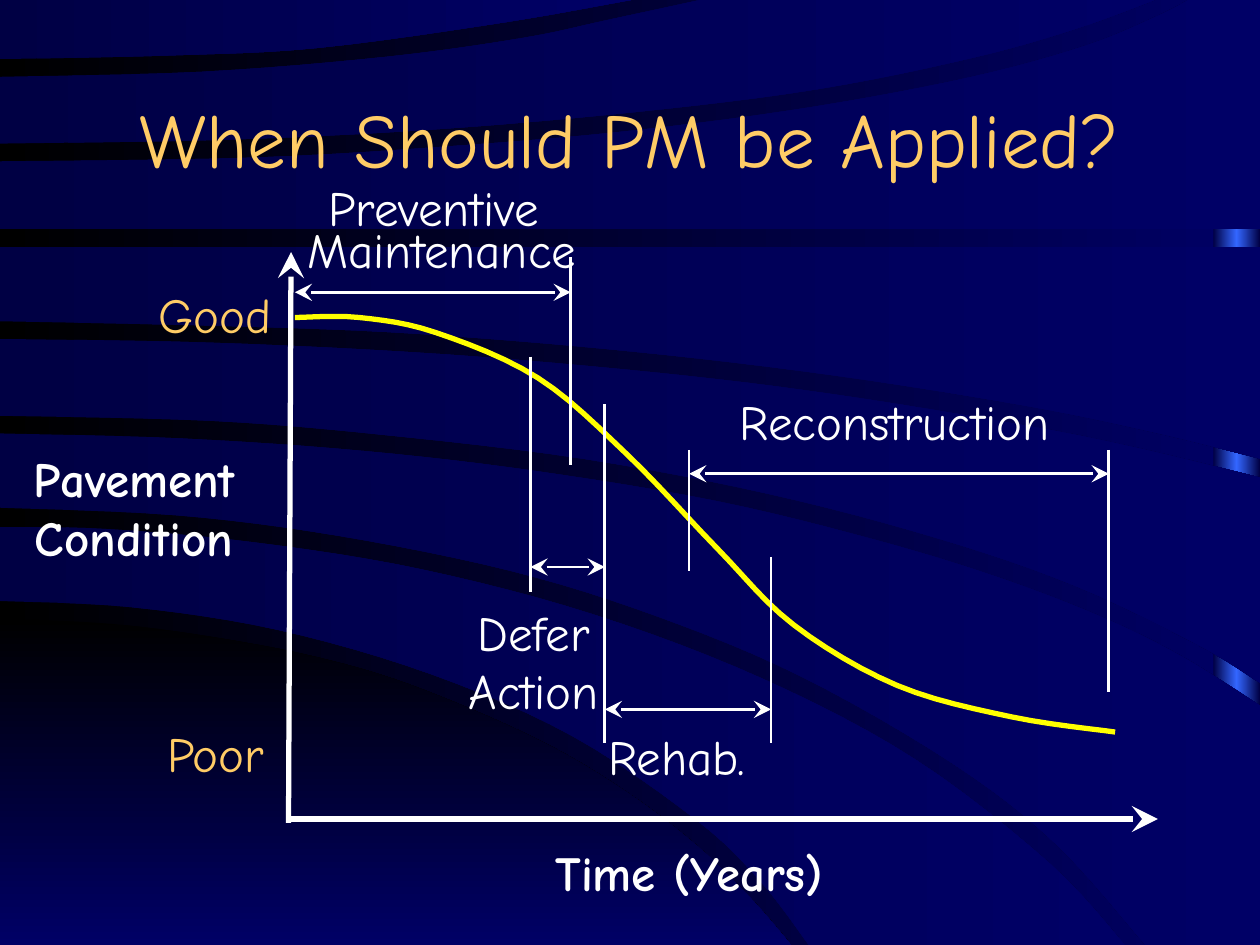
"""Build the slide on when preventive maintenance should be applied to a pavement."""
from copy import deepcopy
from dataclasses import dataclass

from lxml import etree
from pptx import Presentation
from pptx.dml.color import RGBColor
from pptx.enum.shapes import MSO_CONNECTOR, MSO_SHAPE
from pptx.enum.text import MSO_ANCHOR, MSO_AUTO_SIZE, PP_ALIGN
from pptx.oxml.ns import qn
from pptx.util import Inches, Pt

STRAIGHT = MSO_CONNECTOR.STRAIGHT
RECTANGLE = MSO_SHAPE.RECTANGLE
MIDDLE = MSO_ANCHOR.MIDDLE
FIT = MSO_AUTO_SIZE.SHAPE_TO_FIT_TEXT
LEFT, CENTER = PP_ALIGN.LEFT, PP_ALIGN.CENTER
TITLE_ONLY = 5
COLUMNS, ROWS = 100, 75
WIDTH, HEIGHT = Inches(10), Inches(7.5)
ARROWHEAD = {"type": "stealth", "w": "lg", "len": "lg"}

Point = tuple[float, float]


@dataclass(frozen=True)
class Theme:
    """Colours, font, type sizes and line widths."""
    font: str = "Comic Neue"
    title_size: int = 44
    label_size: int = 28
    text: str = "FFFFFF"
    accent: str = "FFCC66"
    curve: str = "FFFF00"
    sky: tuple = ("000000", "000066")
    band: tuple = ("000044", "000066")
    strip: tuple = ("000044", "3366FF", "000044")
    heavy: float = 3
    fine: float = 1.5


THEME = Theme()


@dataclass(frozen=True)
class Band:
    """Background sweep between two smooth edges running left to right."""
    upper: tuple
    lower: tuple
    corners: tuple = ()
    colors: tuple = THEME.band
    angle: int = 0


@dataclass(frozen=True)
class Label:
    """Text lines in a box placed by columns and rows."""
    lines: tuple
    area: tuple
    align: int = LEFT
    color: str = THEME.text
    bold: bool = False
    spacing: tuple = (1, 1)


@dataclass(frozen=True)
class Phase:
    """Treatment period: a double arrow, its upright limits and its label."""
    start: float
    end: float
    arrow_row: float
    limits: tuple
    label: Label


BANDS = (
    Band(((0, 49.1), (8.6, 49.5), (16.5, 50.5), (24.9, 52.1), (32.7, 54.4), (42.5, 58.6),
          (49.5, 62.7), (55.3, 67.1), (59.6, 71.3), (62.8, 75)),
         ((0, 75), (62.8, 75)), colors=THEME.sky, angle=270),
    Band(((0, 41.8), (8.7, 42), (20.6, 43.1), (33.5, 45.2), (47.2, 48.8), (60.6, 53.9),
          (72.7, 60.3), (83.3, 68.5), (89.3, 75)),
         ((0, 47.7), (10.5, 48.2), (22.1, 50), (34.2, 53.5), (45.4, 58.4), (55.3, 65.1),
          (60.4, 70), (64.2, 75))),
    Band(((0, 34.4), (14.4, 34.8), (28.9, 35.8), (42.6, 37.4), (57, 39.8), (69.3, 42.8),
          (78.9, 45.7), (87.3, 48.9), (93.8, 52.1), (100, 56)),
         ((0, 40.3), (14, 40.9), (26.7, 42.5), (40.5, 45.3), (52.1, 48.9), (63.6, 53.7),
          (75.6, 60.6), (83.8, 67), (90.9, 75)), ((100, 75),)),
    Band(((0, 26.9), (16.8, 27.2), (34.9, 28.1), (52.3, 29.6), (66.2, 31.3), (81.6, 33.8),
          (90.5, 35.6), (100, 37.9)),
         ((0, 33), (16.7, 33.4), (30.3, 34.5), (46.2, 36.4), (61, 39.2), (74.3, 42.7),
          (85.3, 46.5), (95.1, 51.2), (100, 54.2))),
    Band(((0, 19.6), (100, 19.6)),
         ((0, 25.5), (18.6, 25.9), (33.2, 26.5), (50.2, 27.9), (66.2, 29.8), (81.3, 32.2),
          (91.5, 34.3), (100, 36.4))),
    Band(((0, 12.8), (20.3, 12.5), (37.2, 11.5), (50.8, 10.3), (64.4, 8.5), (77.1, 6.1),
          (86.2, 3.6), (92, 1.2), (94.3, 0)),
         ((0, 18.2), (100, 18.2)), ((100, 0),)),
    Band(((0, 6.1), (16, 5.7), (30.8, 4.5), (41.6, 3), (48.2, 1.6), (55.6, 0)),
         ((0, 11.4), (17.7, 11.1), (34.1, 10.3), (50.4, 8.9), (64.8, 7.1), (77.2, 4.6),
          (85.4, 2.3), (91.7, 0))),
    Band(((0, 0), (50.1, 0)),
         ((0, 4.7), (13.7, 4.4), (25.3, 3.8), (39.9, 1.8), (50.1, 0))),
)
CONDITION = ((23.4, 25.2), (28.5, 25.2), (34.6, 26.4), (42.7, 30), (49.8, 36.1),
             (56.9, 43.5), (63, 49.6), (71.2, 54.4), (80.3, 56.9), (88.5, 58.1))
AXIS_LABELS = (
    Label(("Pavement", "Condition"), (0, 35.1, 21.3, 10.3), CENTER, bold=True),
    Label(("Time (Years)",), (43.1, 66.4, 27.8, 5.7), bold=True),
    Label(("Good",), (11.6, 22.1, 12.2, 5.7), color=THEME.accent),
    Label(("Poor",), (12.3, 56.9, 11.2, 5.7), color=THEME.accent),
)
PHASES = (
    Phase(23.4, 45.3, 23.2, ((45.3, 20.4, 36.9),),
          Label(("Preventive ", "Maintenance"), (22.7, 14.5, 24.7, 8), CENTER,
                spacing=(0.8, 0.7))),
    Phase(42.1, 48, 45, ((42.1, 28.3, 47), (48, 33.3, 50)),
          Label(("Defer", "Action"), (35.4, 47.3, 13.9, 10.3), CENTER)),
    Phase(54.7, 88, 37.6, ((54.7, 35.7, 45.3), (88, 35.7, 54.9)),
          Label(("Reconstruction",), (52.1, 30.6, 37.8, 5.7), CENTER)),
    Phase(48, 61.2, 56.3, ((48, 32.1, 59), (61.2, 44.2, 59)),
          Label(("Rehab.",), (47.3, 57.2, 13, 5.7))),
)


def place(column: float, row: float) -> tuple[int, int]:
    """Turn a grid position into slide units."""
    return round(column * WIDTH / COLUMNS), round(row * HEIGHT / ROWS)


def smooth(knots: tuple, steps: int = 6) -> list[Point]:
    """Return points of a Catmull-Rom curve through the knots."""
    padded = (knots[0], *knots, knots[-1])
    points = [knots[0]]
    for a, b, c, d in zip(padded, padded[1:], padded[2:], padded[3:]):
        for t in (step / steps for step in range(1, steps + 1)):
            points.append(tuple(
                q + ((r - p) * t + (2 * p - 5 * q + 4 * r - s) * t**2
                     + (3 * q - p - 3 * r + s) * t**3) / 2
                for p, q, r, s in zip(a, b, c, d)))
    return points


def paint_gradient(fill, colors: tuple, angle: int = 0) -> None:
    """Fill with evenly spaced colour stops."""
    fill.gradient()
    fill.gradient_angle = angle
    stops = fill._xPr.find(".//" + qn("a:gsLst"))
    for _ in colors[2:]:
        stops.append(deepcopy(stops[0]))
    for index, (stop, color) in enumerate(zip(fill.gradient_stops, colors)):
        stop.color.rgb = RGBColor.from_string(color)
        stop.position = index / (len(colors) - 1)


def draw_outline(page, points: list[Point], closed: bool):
    """Draw a freeform through grid points."""
    first, *rest = [place(*point) for point in points]
    builder = page.shapes.build_freeform(*first)
    builder.add_line_segments(rest, close=closed)
    shape = builder.convert_to_shape()
    shape.shadow.inherit = False
    return shape


def draw_band(page, band: Band) -> None:
    """Draw one background sweep."""
    points = smooth(band.upper) + list(band.corners) + smooth(band.lower)[::-1]
    shape = draw_outline(page, points, True)
    paint_gradient(shape.fill, band.colors, band.angle)
    shape.line.fill.background()


def draw_line(page, start: Point, end: Point, width: float, arrows: tuple = ()) -> None:
    """Draw a straight line with stealth arrowheads at the named ends."""
    line = page.shapes.add_connector(STRAIGHT, *place(*start), *place(*end))
    line.line.color.rgb = RGBColor.from_string(THEME.text)
    line.line.width = Pt(width)
    for arrow in arrows:
        etree.SubElement(line.line._get_or_add_ln(), qn(f"a:{arrow}"), ARROWHEAD)
    etree.SubElement(line._element.spPr, qn("a:effectLst"))


def write(para, text: str, size: int, color: str, bold: bool = False) -> None:
    """Put one formatted run in a paragraph."""
    span = para.add_run()
    span.text = text
    for name, value in {"name": THEME.font, "size": Pt(size), "bold": bold}.items():
        setattr(span.font, name, value)
    span.font.color.rgb = RGBColor.from_string(color)


def draw_label(page, label: Label) -> None:
    """Draw a text box of one or more lines."""
    left, top, width, height = label.area
    box = page.shapes.add_textbox(*place(left, top), *place(width, height))
    frame = box.text_frame
    frame.word_wrap, frame.auto_size = False, FIT
    for index, (text, spacing) in enumerate(zip(label.lines, label.spacing)):
        para = frame.add_paragraph() if index else frame.paragraphs[0]
        para.alignment, para.line_spacing = label.align, float(spacing)
        write(para, text, THEME.label_size, label.color, label.bold)


def draw_phase(page, phase: Phase) -> None:
    """Draw a treatment period."""
    for column, top, bottom in phase.limits:
        draw_line(page, (column, top), (column, bottom), THEME.fine)
    draw_line(page, (phase.start, phase.arrow_row), (phase.end, phase.arrow_row),
              THEME.fine, ("headEnd", "tailEnd"))
    draw_label(page, phase.label)


def draw_title(page, text: str) -> None:
    """Place and format the title in front of the background."""
    title = page.shapes.title
    page.shapes._spTree.append(title._element)
    (title.left, title.top), (title.width, title.height) = place(5, 5.8), place(90, 10.3)
    title.text_frame.vertical_anchor = MIDDLE
    para = title.text_frame.paragraphs[0]
    para.alignment = CENTER
    write(para, text, THEME.title_size, THEME.accent)


def main() -> None:
    """Build and save the deck."""
    deck = Presentation()
    deck.slide_width, deck.slide_height = WIDTH, HEIGHT
    page = deck.slides.add_slide(deck.slide_layouts[TITLE_ONLY])
    paint_gradient(page.background.fill, THEME.sky)
    strip = page.shapes.add_shape(RECTANGLE, *place(96.3, 0), *place(3.7, ROWS))
    strip.shadow.inherit = False
    strip.line.fill.background()
    paint_gradient(strip.fill, THEME.strip)
    for band in BANDS:
        draw_band(page, band)
    draw_title(page, "When Should PM be Applied?")
    draw_line(page, (22.9, 65), (91.9, 65), THEME.heavy, ("tailEnd",))
    draw_line(page, (23.1, 20), (22.9, 65.3), THEME.heavy, ("headEnd",))
    curve = draw_outline(page, smooth(CONDITION), False)
    curve.fill.background()
    curve.line.color.rgb = RGBColor.from_string(THEME.curve)
    curve.line.width = Pt(THEME.heavy)
    for label in AXIS_LABELS:
        draw_label(page, label)
    for phase in PHASES:
        draw_phase(page, phase)
    deck.save("out.pptx")


if __name__ == "__main__":
    main()
